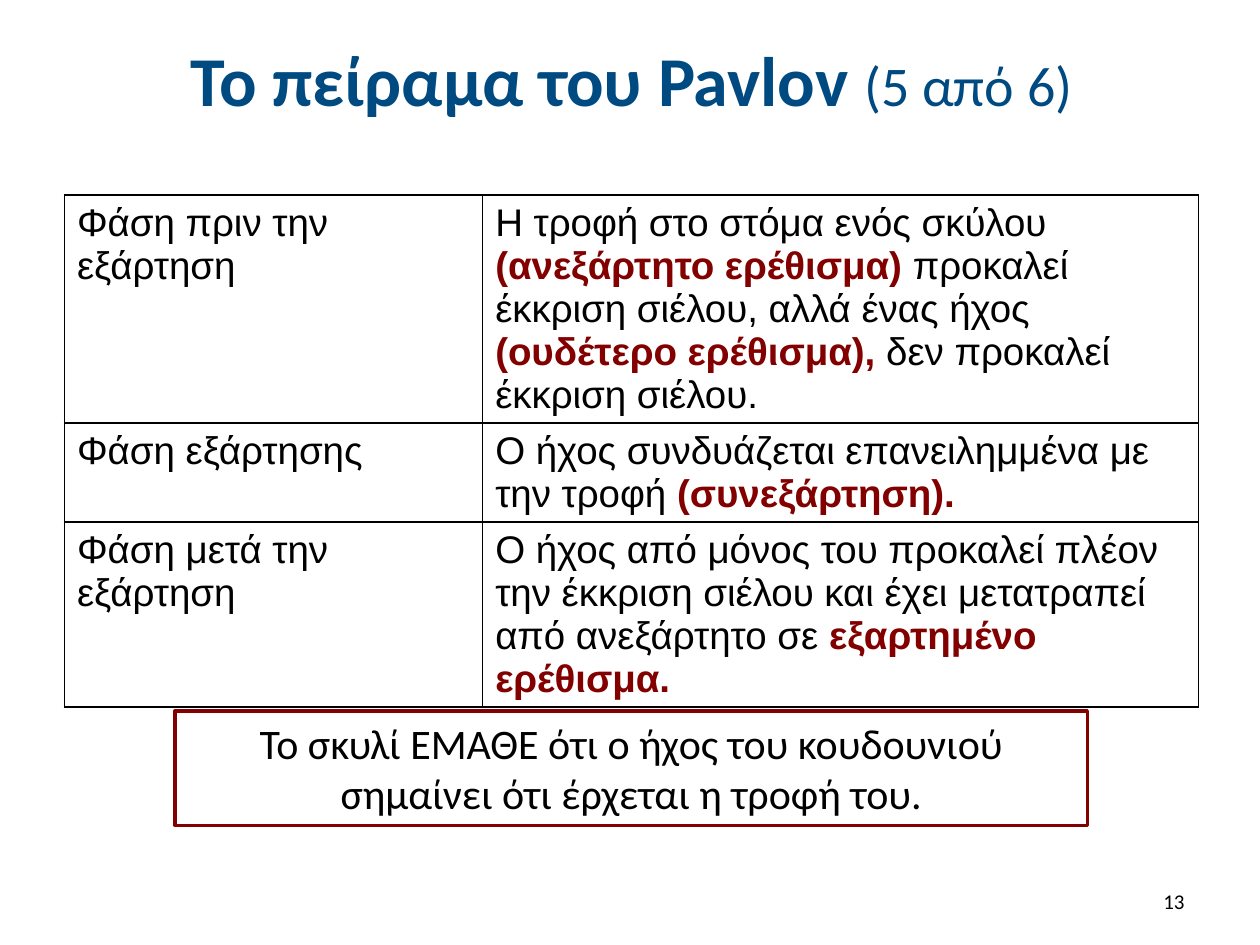
from dataclasses import dataclass

from lxml import etree
from pptx import Presentation
from pptx import util as u
from pptx.dml.color import RGBColor
from pptx.enum import shapes, text
from pptx.oxml import ns


@dataclass(frozen=True)
class Theme:
    heading_font: str = "Calibri"
    table_font: str = "Arial"
    blue: str = "004A82"
    red: str = "820000"
    black: str = "000000"
    title_size: int = 40
    part_size: int = 32
    table_size: int = 22
    box_size: int = 24
    number_size: int = 12


THEME = Theme()


@dataclass(frozen=True)
class Span:
    """A stretch of text in one format."""
    text: str
    size: float
    font: str = THEME.heading_font
    color: str = THEME.black
    bold: bool = False


@dataclass(frozen=True)
class Phase:
    """One table row; every second part of the description is a key term."""
    name: str
    description: tuple[str, ...]
    height: float


PHASES = (
    Phase("Φάση πριν την εξάρτηση",
          ("Η τροφή στο στόμα ενός σκύλου ", "(ανεξάρτητο ερέθισμα)",
           " προκαλεί έκκριση σιέλου, αλλά ένας ήχος ", "(ουδέτερο ερέθισμα),",
           " δεν προκαλεί έκκριση σιέλου."), 4.6),
    Phase("Φάση εξάρτησης",
          ("Ο ήχος συνδυάζεται επανειλημμένα με την τροφή ", "(συνεξάρτηση)."), 1.99),
    Phase("Φάση μετά την εξάρτηση",
          ("Ο ήχος από μόνος του προκαλεί πλέον την έκκριση σιέλου και έχει "
           "μετατραπεί από ανεξάρτητο σε ", "εξαρτημένο ερέθισμα."), 3.73),
)
COLUMN_WIDTHS = (8.43, 14.43)


def place(shape, left: float, top: float, width: float, height: float) -> None:
    shape.left, shape.top = u.Cm(left), u.Cm(top)
    shape.width, shape.height = u.Cm(width), u.Cm(height)


def write(text_frame, spans: list[Span], alignment=text.PP_ALIGN.LEFT) -> None:
    paragraph = text_frame.paragraphs[0]
    paragraph.alignment = alignment
    for span in spans:
        run = paragraph.add_run()
        run.text = span.text
        run.font.size = u.Pt(span.size)
        run.font.name = span.font
        run.font.bold = span.bold
        run.font.color.rgb = RGBColor.from_string(span.color)


def add_borders(cell, color: str, width: float = 1) -> None:
    properties = cell._tc.get_or_add_tcPr()
    for position, side in enumerate(("a:lnL", "a:lnR", "a:lnT", "a:lnB")):
        line = etree.Element(ns.qn(side), w=str(u.Pt(width)))
        fill = etree.SubElement(line, ns.qn("a:solidFill"))
        etree.SubElement(fill, ns.qn("a:srgbClr"), val=color)
        properties.insert(position, line)


def fill_cell(cell, spans: list[Span]) -> None:
    cell.fill.background()
    add_borders(cell, THEME.black)
    write(cell.text_frame, spans)


def table_span(content: str, key_term: bool = False) -> Span:
    return Span(content, THEME.table_size, THEME.table_font,
                THEME.red if key_term else THEME.black, key_term)


def add_phase_table(slide) -> None:
    table = slide.shapes.add_table(
        len(PHASES), len(COLUMN_WIDTHS), u.Cm(1.3), u.Cm(3.93),
        u.Cm(sum(COLUMN_WIDTHS)), u.Cm(sum(phase.height for phase in PHASES))).table
    table.first_row = table.horz_banding = False
    for column, width in zip(table.columns, COLUMN_WIDTHS):
        column.width = u.Cm(width)
    for index, phase in enumerate(PHASES):
        table.rows[index].height = u.Cm(phase.height)
        fill_cell(table.cell(index, 0), [table_span(phase.name)])
        fill_cell(table.cell(index, 1), [table_span(part, position % 2 == 1)
                                         for position, part in enumerate(phase.description)])


def add_conclusion(slide) -> None:
    box = slide.shapes.add_shape(shapes.MSO_SHAPE.RECTANGLE, u.Cm(3.53), u.Cm(14.33),
                                 u.Cm(18.39), u.Cm(2.31))
    box.shadow.inherit = False
    box.fill.background()
    box.line.color.rgb = RGBColor.from_string(THEME.red)
    box.line.width = u.Pt(2)
    box.text_frame.word_wrap = True
    box.text_frame.vertical_anchor = text.MSO_ANCHOR.TOP
    write(box.text_frame,
          [Span("Το σκυλί ΕΜΑΘΕ ότι ο ήχος του κουδουνιού σημαίνει ότι έρχεται "
                "η τροφή του.", THEME.box_size)], text.PP_ALIGN.CENTER)


def main() -> None:
    presentation = Presentation()
    presentation.slide_width, presentation.slide_height = u.Cm(25.4), u.Cm(19.05)
    slide = presentation.slides.add_slide(presentation.slide_layouts[5])

    # Title
    title = slide.shapes.title
    place(title, 1.3, 0.33, 22.86, 2.51)
    title.text_frame.vertical_anchor = text.MSO_ANCHOR.MIDDLE
    write(title.text_frame,
          [Span("Το πείραμα του Pavlov ", THEME.title_size, color=THEME.blue, bold=True),
           Span("(5 από 6)", THEME.part_size, color=THEME.blue)], text.PP_ALIGN.CENTER)

    # Phases of conditioning
    add_phase_table(slide)

    # Slide number
    number = slide.shapes.add_textbox(u.Cm(18.21), u.Cm(17.65), u.Cm(5.92), u.Cm(1.02))
    number.text_frame.word_wrap = True
    number.text_frame.vertical_anchor = text.MSO_ANCHOR.MIDDLE
    write(number.text_frame, [Span("13", THEME.number_size)], text.PP_ALIGN.RIGHT)

    # Conclusion
    add_conclusion(slide)

    presentation.save("out.pptx")


if __name__ == "__main__":
    main()
